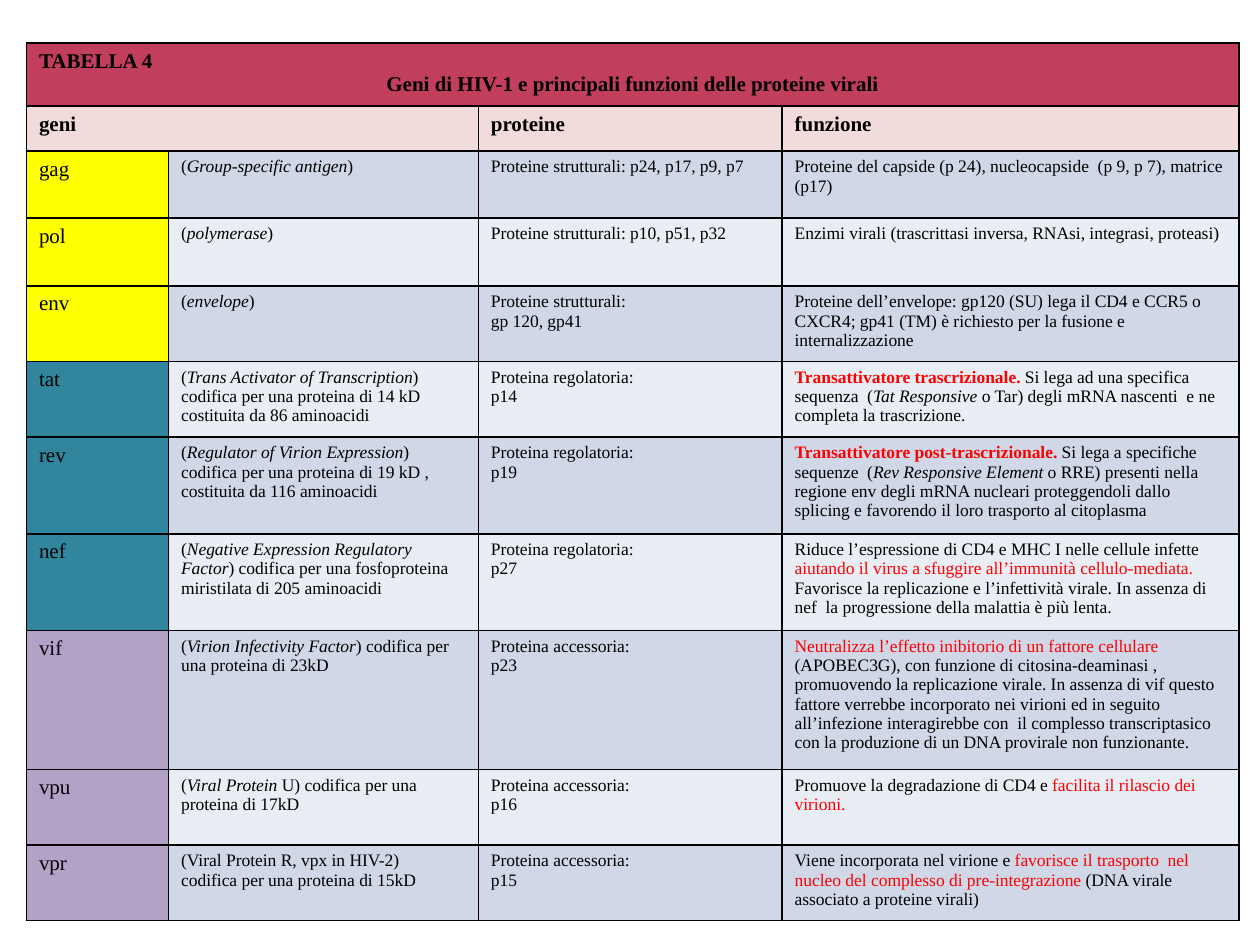
import pptx
import pptx.util
import pptx.dml.color
import pptx.enum.text
import pptx.oxml
import pptx.oxml.ns
from lxml import etree

Pt = pptx.util.Pt
RGBColor = pptx.dml.color.RGBColor

FONT = "Times New Roman"
BLACK = RGBColor(0x00, 0x00, 0x00)
RED = RGBColor(0xFF, 0x00, 0x00)
CRIMSON = RGBColor(0xC1, 0x3E, 0x5D)
PINK = RGBColor(0xF2, 0xDC, 0xDB)
YELLOW = RGBColor(0xFF, 0xFF, 0x00)
TEAL = RGBColor(0x31, 0x85, 0x9C)
LILAC = RGBColor(0xB3, 0xA2, 0xC7)
BANDS = (RGBColor(0xD0, 0xD8, 0xE8), RGBColor(0xE9, 0xED, 0xF4))

LEFT, TOP = 15.12, 24.6
COLUMN_WIDTHS = (81.2, 177, 173.6, 261.2)
TITLE_HEIGHT, HEADING_HEIGHT = 36, 25.7
HEADING_SIZE, BODY_SIZE = 12, 10

TITLE = ("TABELLA 4", "Geni di HIV-1 e principali funzioni delle proteine virali")
HEADINGS = {0: "geni", 2: "proteine", 3: "funzione"}

# Gene, its colour, row height, then the paragraphs of the three other columns.
# A paragraph is a list of (text, style): b bold, i italic, r red.
GENES = [
    ("gag", YELLOW, 38.3,
     [[("(", ""), ("Group-specific antigen", "i"), (")", "")]],
     [[("Proteine strutturali: p24, p17, p9, p7", "")]],
     [[("Proteine del capside (p 24), nucleocapside  (p 9, p 7), matrice (p17)", "")]]),
    ("pol", YELLOW, 38.8,
     [[("(", ""), ("polymerase", "i"), (")", "")]],
     [[("Proteine strutturali: p10, p51, p32", "")]],
     [[("Enzimi virali (trascrittasi inversa, RNAsi, integrasi, proteasi)", "")]]),
    ("env", YELLOW, 43.2,
     [[("(", ""), ("envelope", "i"), (")", "")]],
     [[("Proteine strutturali:", "")], [("gp 120, gp41", "")]],
     [[("Proteine dell’envelope: gp120 (SU) lega il CD4 e CCR5 o CXCR4; "
        "gp41 (TM) è richiesto per la fusione e internalizzazione", "")]]),
    ("tat", TEAL, 43.2,
     [[("(", ""), ("Trans Activator of Transcription", "i"),
       (") codifica per una proteina di 14 kD costituita da 86 aminoacidi", "")]],
     [[("Proteina regolatoria:", "")], [("p14", "")]],
     [[("Transattivatore trascrizionale. ", "br"),
       ("Si lega ad una specifica sequenza  (", ""), ("Tat Responsive ", "i"),
       ("o Tar) degli mRNA nascenti  e ne completa la trascrizione.", "")]]),
    ("rev", TEAL, 55.3,
     [[("(", ""), ("Regulator of Virion Expression", "i"),
       (") codifica per una proteina di 19 kD , costituita da 116 aminoacidi", "")]],
     [[("Proteina regolatoria:", "")], [("p19", "")]],
     [[("Transattivatore post-trascrizionale. ", "br"),
       ("Si lega a specifiche sequenze  (", ""), ("Rev Responsive Element ", "i"),
       ("o RRE) presenti nella regione env degli mRNA nucleari proteggendoli "
        "dallo splicing e favorendo il loro trasporto al citoplasma", "")]]),
    ("nef", TEAL, 55.3,
     [[("(", ""), ("Negative Expression Regulatory Factor", "i"),
       (") codifica per una fosfoproteina miristilata di 205 aminoacidi", "")]],
     [[("Proteina regolatoria:", "")], [("p27", "")]],
     [[("Riduce l’espressione di CD4 e MHC I nelle cellule infette ", ""),
       ("aiutando il virus a sfuggire all’immunità cellulo-mediata.", "r"),
       (" Favorisce la replicazione e l’infettività virale. In assenza di  nef  "
        "la progressione della malattia è più lenta.", "")]]),
    ("vif", LILAC, 79.4,
     [[("(", ""), ("Virion Infectivity Factor", "i"),
       (") codifica per una proteina di 23kD", "")]],
     [[("Proteina accessoria:", "")], [("p23", "")]],
     [[("Neutralizza l’effetto inibitorio di un fattore cellulare ", "r"),
       ("(APOBEC3G), con funzione di citosina-deaminasi ,  promuovendo la "
        "replicazione virale. In assenza di vif questo fattore verrebbe "
        "incorporato nei virioni ed in seguito all’infezione interagirebbe con  "
        "il complesso transcriptasico con la produzione di un DNA provirale "
        "non funzionante.", "")]]),
    ("vpu", LILAC, 43.2,
     [[("(", ""), ("Viral Protein ", "i"), ("U) codifica per una proteina di 17kD", "")]],
     [[("Proteina accessoria:", "")], [("p16", "")]],
     [[("Promuove la degradazione di CD4 e ", ""),
       ("facilita il rilascio dei virioni.", "r")]]),
    ("vpr", LILAC, 43.2,
     [[("(Viral Protein R, vpx in HIV-2)", "")],
      [("codifica per una proteina di 15kD", "")]],
     [[("Proteina accessoria:", "")], [("p15", "")]],
     [[("Viene incorporata nel virione e ", ""),
       ("favorisce il trasporto  nel nucleo del complesso di pre-integrazione ", "r"),
       ("(DNA virale associato a proteine virali)", "")]]),
]


def add_borders(cell):
    properties = cell._tc.get_or_add_tcPr()
    for position, side in enumerate(("lnL", "lnR", "lnT", "lnB")):
        line = etree.Element(pptx.oxml.ns.qn("a:" + side), w=str(Pt(1)))
        fill = etree.SubElement(line, pptx.oxml.ns.qn("a:solidFill"))
        etree.SubElement(fill, pptx.oxml.ns.qn("a:srgbClr"), val=str(BLACK))
        properties.insert(position, line)


def fill_cell(cell, colour):
    cell.fill.solid()
    cell.fill.fore_color.rgb = colour


def write(cell, paragraphs, size):
    frame = cell.text_frame
    for number, spans in enumerate(paragraphs):
        para = frame.add_paragraph() if number else frame.paragraphs[0]
        for text, style in spans:
            span = para.add_run()
            span.text = text
            span.font.name = FONT
            span.font.size = Pt(size)
            span.font.bold = "b" in style
            span.font.italic = "i" in style
            span.font.color.rgb = RED if "r" in style else BLACK


def main():
    deck = pptx.Presentation()
    deck.slide_width, deck.slide_height = Pt(720), Pt(540)
    page = deck.slides.add_slide(deck.slide_layouts[6])

    heights = [TITLE_HEIGHT, HEADING_HEIGHT] + [gene[2] for gene in GENES]
    table = page.shapes.add_table(
        len(heights), len(COLUMN_WIDTHS), Pt(LEFT), Pt(TOP),
        Pt(sum(COLUMN_WIDTHS)), Pt(sum(heights))).table
    for column, width in zip(table.columns, COLUMN_WIDTHS):
        column.width = Pt(width)
    for row, height in zip(table.rows, heights):
        row.height = Pt(height)

    for column in range(len(COLUMN_WIDTHS)):
        fill_cell(table.cell(0, column), CRIMSON)
        fill_cell(table.cell(1, column), PINK)
    title = table.cell(0, 0)
    title.merge(table.cell(0, len(COLUMN_WIDTHS) - 1))
    write(title, [[(line, "b")] for line in TITLE], HEADING_SIZE)
    title.text_frame.paragraphs[1].alignment = pptx.enum.text.PP_ALIGN.CENTER
    table.cell(1, 0).merge(table.cell(1, 1))
    for column, heading in HEADINGS.items():
        write(table.cell(1, column), [[(heading, "b")]], HEADING_SIZE)

    for index, (gene, colour, _, *details) in enumerate(GENES):
        row = index + 2
        fill_cell(table.cell(row, 0), colour)
        write(table.cell(row, 0), [[(gene, "")]], HEADING_SIZE)
        for column, paragraphs in enumerate(details, start=1):
            fill_cell(table.cell(row, column), BANDS[index % 2])
            write(table.cell(row, column), paragraphs, BODY_SIZE)

    for cell in table.iter_cells():
        add_borders(cell)
    deck.save("out.pptx")


if __name__ == "__main__":
    main()
